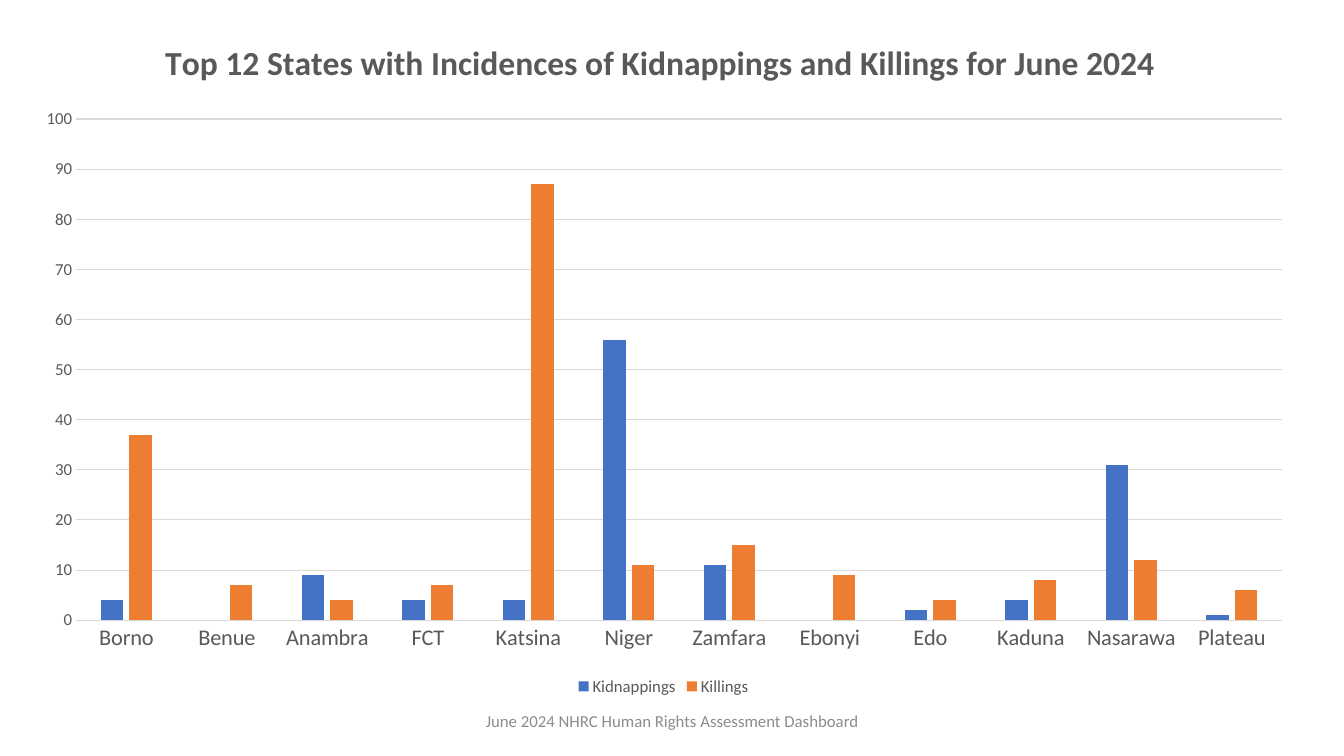
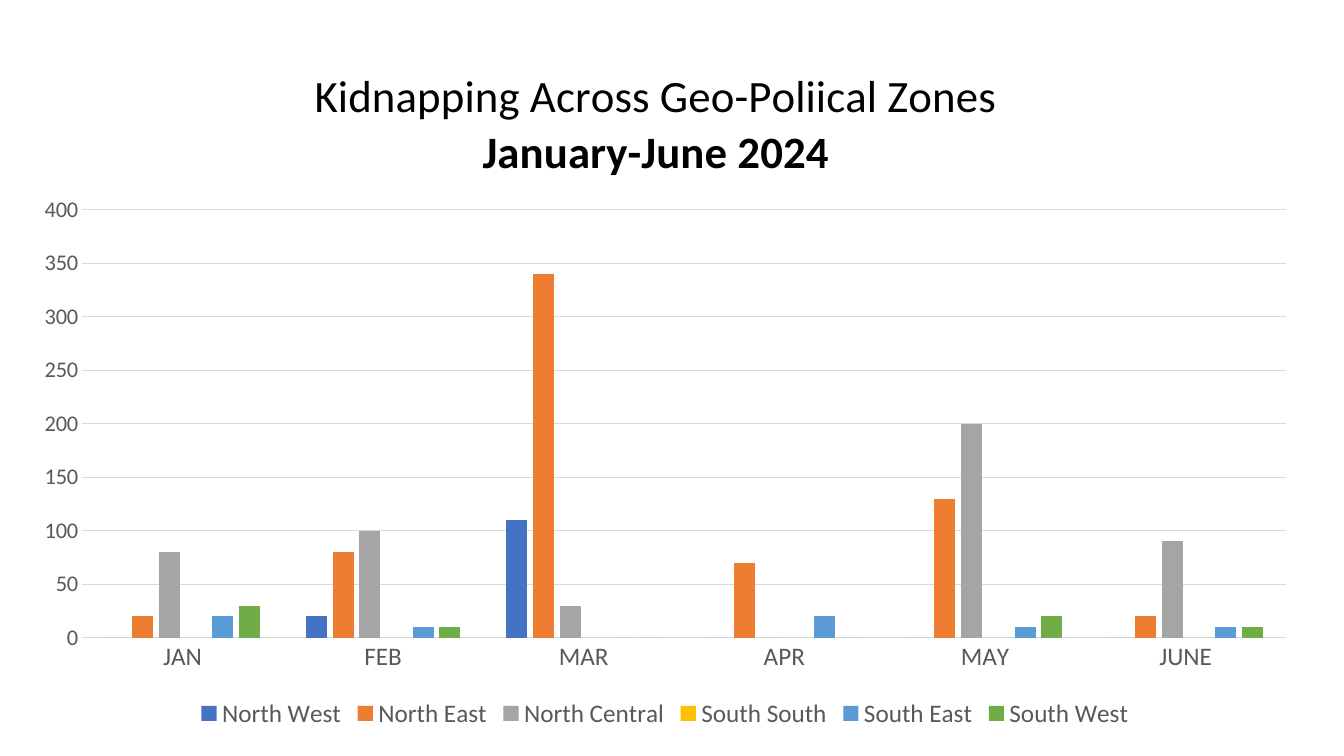
from lxml import etree
from pptx import Presentation
from pptx.chart.data import CategoryChartData
from pptx.dml.color import RGBColor
from pptx.enum.chart import XL_CHART_TYPE, XL_LEGEND_POSITION, XL_TICK_MARK
from pptx.enum.text import MSO_ANCHOR, PP_ALIGN
from pptx.oxml.ns import qn
from pptx.util import Cm, Pt

COLUMNS = XL_CHART_TYPE.COLUMN_CLUSTERED
LEGEND_BELOW = XL_LEGEND_POSITION.BOTTOM
NO_TICK = XL_TICK_MARK.NONE
CENTER = PP_ALIGN.CENTER
MIDDLE = MSO_ANCHOR.MIDDLE

# Shared style
FONT = "Calibri"
BLACK, DARK_GRAY, MID_GRAY, LIGHT_GRAY = "000000", "595959", "8C8C8C", "D9D9D9"
SERIES_COLORS = ["4472C4", "ED7D31", "A5A5A5", "FFC000", "5B9BD5", "70AD47"]
BLANK_LAYOUT = 6

# Chart data
STATES = ["Borno", "Benue", "Anambra", "FCT", "Katsina", "Niger", "Zamfara",
          "Ebonyi", "Edo", "Kaduna", "Nasarawa", "Plateau"]
STATE_INCIDENTS = {
    "Kidnappings": [4, None, 9, 4, 4, 56, 11, None, 2, 4, 31, 1],
    "Killings": [37, 7, 4, 7, 87, 11, 15, 9, 4, 8, 12, 6],
}
MONTHS = ["JAN", "FEB", "MAR", "APR", "MAY", "JUNE"]
ZONE_KIDNAPPINGS = {
    "North West": [0, 20, 110, 0, 0, 0],
    "North East": [20, 80, 340, 70, 130, 20],
    "North Central": [80, 100, 30, 0, 200, 90],
    "South South": [0, 0, 0, 0, 0, 0],
    "South East": [20, 10, 0, 20, 10, 10],
    "South West": [30, 10, 0, 0, 20, 10],
}


def rgb(color):
    return RGBColor.from_string(color)


def style_font(font, size, color, bold=False):
    font.name, font.size, font.bold = FONT, Pt(size), bold
    font.color.rgb = rgb(color)


def style_line(line, color):
    line.color.rgb = rgb(color)
    line.width = Pt(0.75)


def place_part(part, index, frame, left, top, width=None, height=None):
    """Fix a chart part at a slide position in cm, inside the chart's frame."""
    for old in part.findall(qn("c:layout")):
        part.remove(old)
    layout = etree.Element(qn("c:layout"))
    manual = etree.SubElement(layout, qn("c:manualLayout"))
    settings = [("xMode", "edge"), ("yMode", "edge"),
                ("x", (left - frame[0]) / frame[2]),
                ("y", (top - frame[1]) / frame[3])]
    if width:
        settings = [("layoutTarget", "inner")] + settings + [
            ("w", width / frame[2]), ("h", height / frame[3])]
    for tag, value in settings:
        etree.SubElement(manual, qn("c:" + tag)).set("val", str(value))
    part.insert(index, layout)


def add_title(chart, lines, size, color, frame, corner):
    """Write the title; lines holds (text, bold) pairs."""
    title = chart.chart_title
    text = title.text_frame
    for number, (words, bold) in enumerate(lines):
        paragraph = text.add_paragraph() if number else text.paragraphs[0]
        paragraph.alignment = CENTER
        paragraph.add_run().text = words
        style_font(paragraph.font, size, color, bold)
        style_font(paragraph.runs[0].font, size, color, bold)
    title.include_in_layout = False
    place_part(title._element, 1, frame, *corner)


def style_axes(chart, category_size, value_size, top_value, step):
    categories, values = chart.category_axis, chart.value_axis
    for axis, size in ((categories, category_size), (values, value_size)):
        axis.major_tick_mark = axis.minor_tick_mark = NO_TICK
        style_font(axis.tick_labels.font, size, DARK_GRAY)
    style_line(categories.format.line, LIGHT_GRAY)
    values.format.line.fill.background()
    values.minimum_scale, values.maximum_scale = 0, top_value
    values.major_unit = step
    style_line(values.major_gridlines.format.line, LIGHT_GRAY)


def add_column_chart(slide, frame, plot_area, categories, series, legend_size):
    data = CategoryChartData()
    data.categories = categories
    for name, values in series.items():
        data.add_series(name, values)
    chart = slide.shapes.add_chart(COLUMNS, *map(Cm, frame), data).chart
    style_font(chart.font, 10, BLACK)

    plot = chart.plots[0]
    plot.gap_width, plot.overlap, plot.vary_by_categories = 219, -27, False
    for columns, color in zip(plot.series, SERIES_COLORS):
        columns.format.fill.solid()
        columns.format.fill.fore_color.rgb = rgb(color)

    chart.has_legend = True
    chart.legend.position = LEGEND_BELOW
    chart.legend.include_in_layout = False
    style_font(chart.legend.font, legend_size, DARK_GRAY)
    place_part(chart._chartSpace.find(".//" + qn("c:plotArea")), 0, frame, *plot_area)
    return chart


def add_footer(slide, words):
    box = slide.shapes.add_textbox(Cm(11.23), Cm(17.65), Cm(11.43), Cm(1.02))
    text = box.text_frame
    text.word_wrap, text.vertical_anchor = True, MIDDLE
    footer = text.paragraphs[0]
    footer.text, footer.alignment = words, CENTER
    style_font(footer.font, 12, MID_GRAY)


def add_states_slide(deck):
    slide = deck.slides.add_slide(deck.slide_layouts[BLANK_LAYOUT])
    frame = (0.5, 0.38, 32.44, 17.27)
    chart = add_column_chart(slide, frame, (1.92, 3, 30.39, 12.63),
                             STATES, STATE_INCIDENTS, 12)
    title = "Top 12 States with Incidences of Kidnappings and Killings for June 2024"
    add_title(chart, [(title, True)], 24, DARK_GRAY, frame, (4.01, 0.85))
    style_axes(chart, 16, 12, 100, 10)
    add_footer(slide, "June 2024 NHRC Human Rights Assessment Dashboard")


def add_zones_slide(deck):
    slide = deck.slides.add_slide(deck.slide_layouts[BLANK_LAYOUT])
    frame = (0.46, 1.04, 32.59, 17.45)
    chart = add_column_chart(slide, frame, (2.07, 5.29, 30.34, 10.78),
                             MONTHS, ZONE_KIDNAPPINGS, 18)
    title = [("Kidnapping Across Geo-Poliical Zones", False),
             ("January-June 2024", True)]
    add_title(chart, title, 32, BLACK, frame, (7.85, 1.62))
    style_axes(chart, 18, 16, 400, 50)


def main():
    deck = Presentation()
    deck.slide_width, deck.slide_height = Cm(33.87), Cm(19.05)
    add_states_slide(deck)
    add_zones_slide(deck)
    deck.save("out.pptx")


if __name__ == "__main__":
    main()
